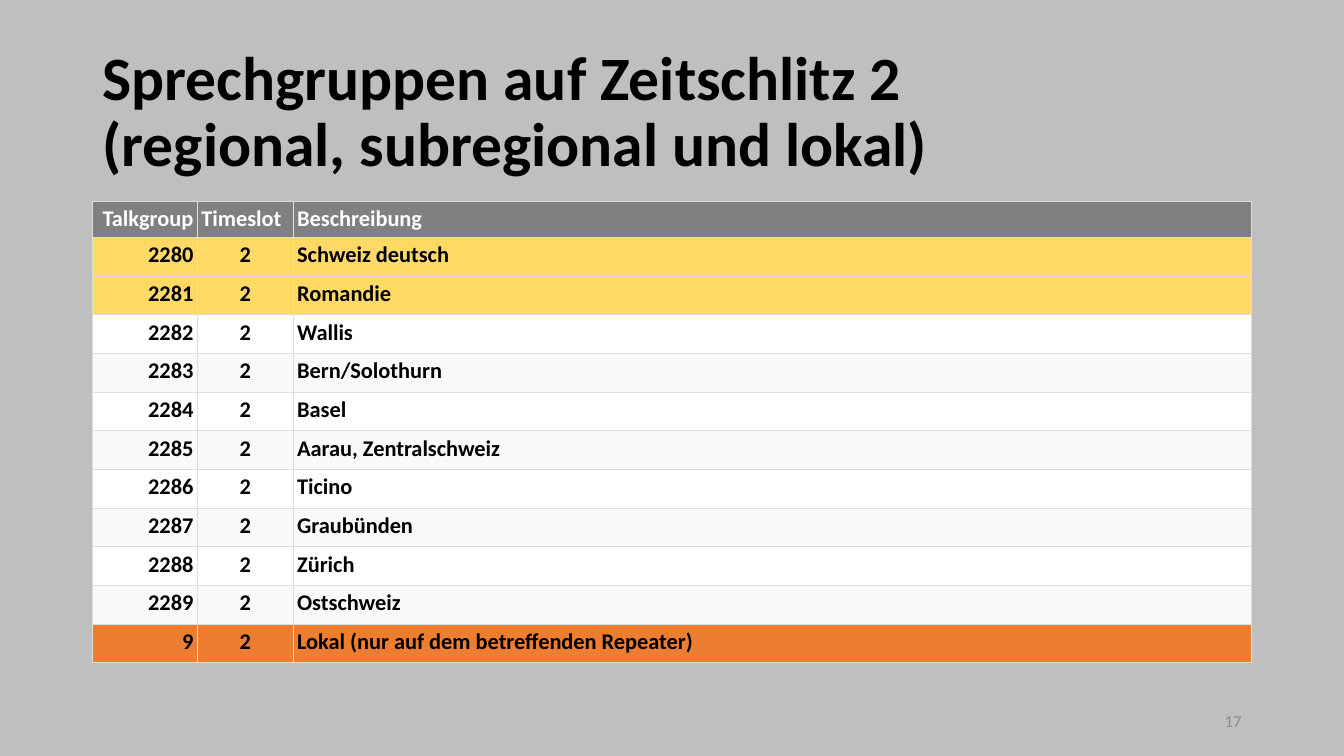
from dataclasses import dataclass
from lxml.etree import SubElement
from pptx import Presentation
from pptx.dml.color import RGBColor
from pptx.enum.text import MSO_ANCHOR as Anchor, MSO_AUTO_SIZE as AutoSize, PP_ALIGN as Align
from pptx.oxml.ns import qn
from pptx.util import Inches, Pt

COLORS = {
    "background": "BFBFBF",
    "text": "000000",
    "header": "808080",
    "header_text": "FFFFFF",
    "highlight": "FFD966",
    "local": "ED7D31",
    "even": "FFFFFF",
    "odd": "F9F9F9",
    "border": "DDDDDD",
    "number": "8C8C8C",
}
HEADERS = ["Talkgroup", "Timeslot", "Beschreibung"]
REGIONS = [
    "Schweiz deutsch", "Romandie", "Wallis", "Bern/Solothurn", "Basel",
    "Aarau, Zentralschweiz", "Ticino", "Graubünden", "Zürich", "Ostschweiz",
]
LOCAL = ["9", "2", "Lokal (nur auf dem betreffenden Repeater)"]
HIGHLIGHTED = 2


@dataclass
class SlideBuilder:
    presentation: object
    font: str = "Calibri"
    columns: int = 160
    rows: int = 90

    def __post_init__(self):
        self.slide = self.presentation.slides.add_slide(self.presentation.slide_layouts[5])
        fill = self.slide.background.fill
        fill.solid()
        fill.fore_color.rgb = self.color("background")

    def color(self, name):
        return RGBColor.from_string(COLORS[name])

    def x(self, count):
        return round(self.presentation.slide_width * count / self.columns)

    def y(self, count):
        return round(self.presentation.slide_height * count / self.rows)

    def box(self, left, top, width, height):
        return self.x(left), self.y(top), self.x(width), self.y(height)

    def set_text(self, frame, text, size, color, align=Align.LEFT, bold=False):
        frame.text = text
        paragraph = frame.paragraphs[0]
        paragraph.alignment = align
        font = paragraph.font
        font.name, font.size, font.bold = self.font, Pt(size), bold
        font.color.rgb = self.color(color)
        return paragraph

    def title(self, text, *place):
        shape = self.slide.shapes.title
        shape.left, shape.top, shape.width, shape.height = self.box(*place)
        frame = shape.text_frame
        frame.auto_size = AutoSize.NONE
        frame.vertical_anchor = Anchor.MIDDLE
        self.set_text(frame, text, 44, "text", bold=True).line_spacing = 0.9

    def number(self, text, *place):
        frame = self.slide.shapes.add_textbox(*self.box(*place)).text_frame
        frame.word_wrap = True
        frame.vertical_anchor = Anchor.MIDDLE
        self.set_text(frame, text, 12, "number", Align.RIGHT)

    def borders(self, cell):
        properties = cell._tc.get_or_add_tcPr()
        for side in ("a:lnL", "a:lnR", "a:lnT", "a:lnB"):
            line = SubElement(properties, qn(side), w=str(Pt(0.75)))
            fill = SubElement(line, qn("a:solidFill"))
            SubElement(fill, qn("a:srgbClr"), val=COLORS["border"])

    def cell(self, cell, text, fill, color, align):
        cell.margin_left = cell.margin_right = Inches(0.04)
        cell.margin_top = cell.margin_bottom = Inches(0.04)
        self.borders(cell)
        cell.fill.solid()
        cell.fill.fore_color.rgb = self.color(fill)
        self.set_text(cell.text_frame, text, 16, color, align, bold=True)

    def table(self, records, fills, left, top, widths, heights):
        place = self.box(left, top, sum(widths), sum(heights))
        table = self.slide.shapes.add_table(len(records), len(widths), *place).table
        for column, width in zip(table.columns, widths):
            column.width = self.x(width)
        for row, height in zip(table.rows, heights):
            row.height = self.y(height)
        for index, (record, fill) in enumerate(zip(records, fills)):
            header = index == 0
            color = "header_text" if header else "text"
            aligns = [Align.RIGHT, Align.LEFT if header else Align.CENTER, Align.LEFT]
            for column, (text, align) in enumerate(zip(record, aligns)):
                self.cell(table.cell(index, column), text, fill, color, align)


def main():
    presentation = Presentation()
    presentation.slide_width, presentation.slide_height = Inches(13.33), Inches(7.5)
    builder = SlideBuilder(presentation)
    builder.title(
        "Sprechgruppen auf Zeitschlitz 2\v(regional, subregional und lokal)",
        11, 4.8, 138, 17.4,
    )
    regional = [[str(2280 + index), "2", region] for index, region in enumerate(REGIONS)]
    stripes = [
        "highlight" if index < HIGHLIGHTED else ("even", "odd")[index % 2]
        for index in range(len(REGIONS))
    ]
    records = [HEADERS, *regional, LOCAL]
    builder.table(
        records, ["header", *stripes, "local"], 11, 24,
        widths=[12.5, 11.4, 114.1], heights=[4.25] + [4.61] * (len(records) - 1),
    )
    builder.number("17", 113, 83.4, 36, 4.8)
    presentation.save("out.pptx")


if __name__ == "__main__":
    main()
